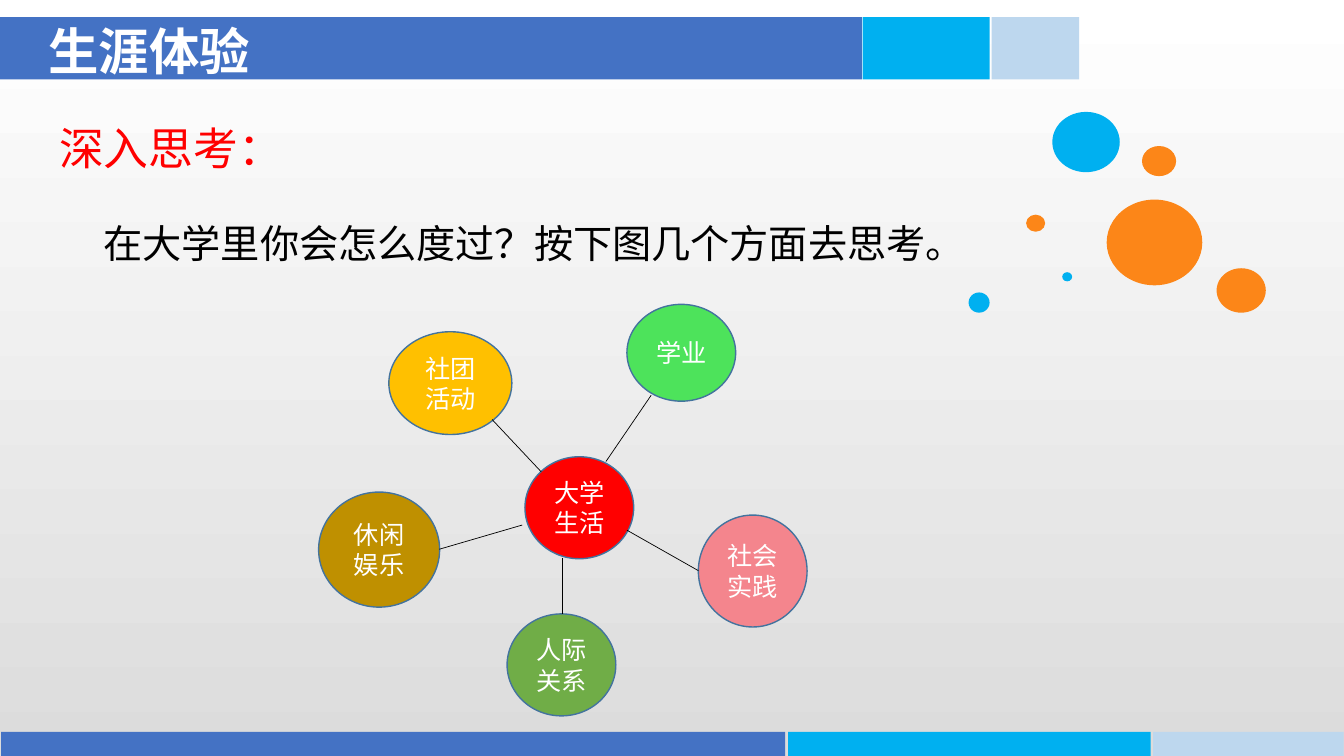
from pptx import Presentation
from pptx.dml.color import RGBColor
from pptx.enum.shapes import MSO_CONNECTOR, MSO_SHAPE
from pptx.enum.text import MSO_ANCHOR, PP_ALIGN
from pptx.oxml.ns import qn
from pptx.util import Cm, Pt

COLORS = {
    "white": "FFFFFF", "silver": "DCDCDC", "black": "000000", "red": "FF0000",
    "blue": "4472C4", "sky": "00B0F0", "pale": "BDD7EE", "orange": "FC8618",
    "outline": "43739E", "green": "4DE35B", "pink": "F4858D",
    "brown": "BF9000", "gold": "FFC000", "leaf": "70AD47",
}

# Bars: top, height, then (left, width, colour) of each segment
BARS = [
    (0.43, 1.57, [(0, 21.72, "blue"), (21.74, 3.2, "sky"), (24.99, 2.21, "pale")]),
    (18.44, 0.61, [(0.03, 19.76, "blue"), (19.86, 9.14, "sky"), (29.06, 4.8, "pale")]),
]
# Bubbles: left, top, width, height, colour
BUBBLES = [
    (24.41, 7.37, 0.53, 0.51, "sky"),
    (27.89, 5.03, 2.41, 2.16, "orange"),
    (26.52, 2.82, 1.7, 1.52, "sky"),
    (30.66, 6.76, 1.24, 1.12, "orange"),
    (28.78, 3.68, 0.86, 0.76, "orange"),
    (25.86, 5.41, 0.48, 0.43, "orange"),
    (26.77, 6.86, 0.25, 0.23, "sky"),
]
# Topics: label, left, top, width, height, colour
TOPICS = [
    ("大学生活", 13.23, 11.51, 2.74, 2.57, "red"),
    ("学业", 15.8, 7.67, 2.74, 2.44, "green"),
    ("社会实践", 17.6, 12.98, 2.74, 2.82, "pink"),
    ("休闲娱乐", 8.03, 12.4, 3.05, 2.9, "brown"),
    ("社团活动", 9.8, 8.36, 3.1, 2.59, "gold"),
    ("人际关系", 12.78, 15.47, 2.74, 2.57, "leaf"),
]
# Spokes: start x, start y, end x, end y
SPOKES = [
    (12.4, 10.57, 13.64, 11.89),
    (15.27, 11.63, 16.41, 9.96),
    (11.07, 13.84, 13.16, 13.23),
    (14.17, 14.07, 14.17, 15.47),
    (15.8, 13.36, 17.6, 14.38),
]


def rgb(name):
    return RGBColor.from_string(COLORS[name])


class SlideBuilder:
    """Draws styled elements on one page, with lengths in centimetres."""

    body_font = "Arial"
    title_font = "Noto Sans CJK SC"

    def __init__(self, page):
        self.page = page

    def background(self, top, bottom):
        fill = self.page.background.fill
        fill.gradient()
        fill.gradient_angle = 270
        for stop, color, position in zip(fill.gradient_stops, (top, bottom), (0, 1)):
            stop.color.rgb = rgb(color)
            stop.position = position

    def shape(self, kind, left, top, width, height, color, outline=None):
        shape = self.page.shapes.add_shape(kind, Cm(left), Cm(top), Cm(width), Cm(height))
        shape.shadow.inherit = False
        shape.fill.solid()
        shape.fill.fore_color.rgb = rgb(color)
        if outline:
            shape.line.color.rgb = rgb(outline)
            shape.line.width = Pt(1)
        else:
            shape.line.fill.background()
        return shape

    def topic(self, label, left, top, width, height, color):
        circle = self.shape(MSO_SHAPE.FLOWCHART_CONNECTOR, left, top, width, height,
                            color, "outline")
        circle.text_frame.word_wrap = True
        circle.text_frame.vertical_anchor = MSO_ANCHOR.MIDDLE
        para = circle.text_frame.paragraphs[0]
        para.alignment = PP_ALIGN.CENTER
        self.span(para, label, 18, "white")

    def spoke(self, x1, y1, x2, y2):
        line = self.page.shapes.add_connector(
            MSO_CONNECTOR.STRAIGHT, Cm(x1), Cm(y1), Cm(x2), Cm(y2))
        line.line.color.rgb = rgb("black")
        line.line.width = Pt(0.5)
        properties = line._element.spPr
        properties.append(properties.makeelement(qn("a:effectLst"), {}))

    def text_box(self, left, top, width, height, anchor=MSO_ANCHOR.TOP):
        box = self.page.shapes.add_textbox(Cm(left), Cm(top), Cm(width), Cm(height))
        box.text_frame.word_wrap = True
        box.text_frame.vertical_anchor = anchor
        return box.text_frame

    def span(self, para, text, size, color, font=body_font, bold=False):
        """Adds one run, with the font set for Latin and East Asian text."""
        span = para.add_run()
        span.text = text
        span.font.size = Pt(size)
        span.font.bold = bold
        span.font.color.rgb = rgb(color)
        span.font.name = font
        properties = span.font._element
        properties.append(properties.makeelement(qn("a:ea"), {"typeface": font}))


def main():
    deck = Presentation()
    deck.slide_width, deck.slide_height = Cm(33.87), Cm(19.05)
    builder = SlideBuilder(deck.slides.add_slide(deck.slide_layouts[6]))
    builder.background("white", "silver")

    for top, height, segments in BARS:
        for left, width, color in segments:
            builder.shape(MSO_SHAPE.RECTANGLE, left, top, width, height, color)
    for bubble in BUBBLES:
        builder.shape(MSO_SHAPE.OVAL, *bubble)

    title = builder.text_box(0.97, 0.61, 9.86, 1.3, MSO_ANCHOR.MIDDLE)
    builder.span(title.paragraphs[0], "生涯体验", 36, "white", builder.title_font, True)

    for topic in TOPICS:
        builder.topic(*topic)
    for spoke in SPOKES:
        builder.spoke(*spoke)

    body = builder.text_box(1.24, 2.92, 23.95, 4.01)
    builder.span(body.paragraphs[0], "深入思考：", 32, "red")
    question = body.add_paragraph()
    question.space_before = Pt(32)
    question._p.get_or_add_pPr().set("marL", str(Cm(1.12)))
    builder.span(question, "在大学里你会怎么度过？按下图几个方面去思考。", 28, "black")

    deck.save("out.pptx")


if __name__ == "__main__":
    main()
